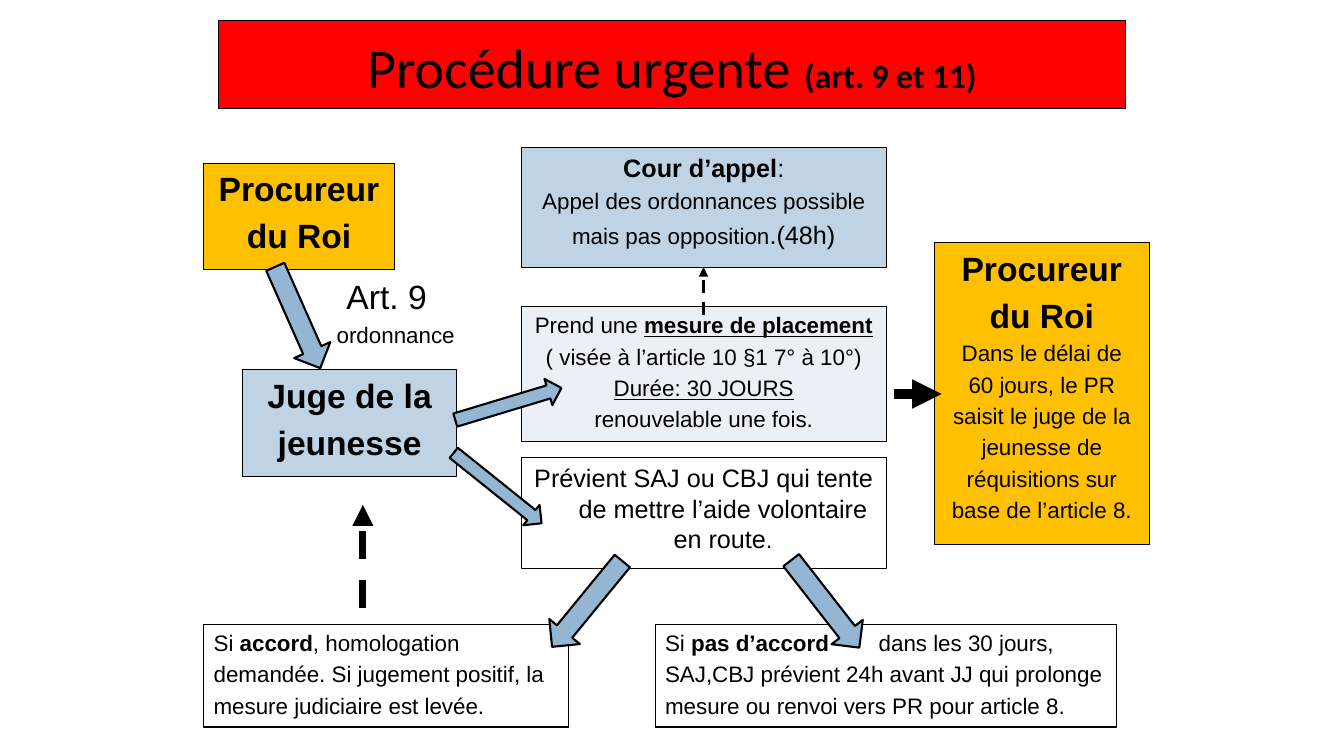
from lxml.etree import SubElement
from pptx import Presentation
from pptx.dml.color import RGBColor
from pptx.enum.dml import MSO_LINE
from pptx.enum.shapes import MSO_CONNECTOR, MSO_SHAPE
from pptx.enum.text import MSO_ANCHOR as ANCHOR, PP_ALIGN as ALIGN
from pptx.oxml.ns import qn
from pptx.util import Inches, Pt

COLS, ROWS = 160, 90
BLACK, RED, GOLD = "000000", "FF0000", "FFC000"
BLUE, PALE, STEEL = "BFD3E4", "EAF0F6", "94B6D2"


def rgb(value):
    return RGBColor.from_string(value)


class Board:
    """Draws styled elements on a slide laid out as a grid of columns and rows."""

    def __init__(self, prs):
        self.s = prs.slides.add_slide(prs.slide_layouts[6])
        self.col = prs.slide_width / COLS
        self.row = prs.slide_height / ROWS

    def place(self, x, y, w, h):
        return [int(v) for v in (x * self.col, y * self.row, w * self.col, h * self.row)]

    def shape(self, kind, at, fill, line=0.75):
        sp = self.s.shapes.add_shape(kind, *self.place(*at))
        sp.shadow.inherit = False
        if fill:
            sp.fill.solid()
            sp.fill.fore_color.rgb = rgb(fill)
        else:
            sp.fill.background()
        sp.line.color.rgb = rgb(BLACK)
        sp.line.width = Pt(line)
        return sp

    def set_text(self, tf, paras, align, font="Arial", hanging=True, shift=0):
        tf.word_wrap = True
        for i, runs in enumerate(paras):
            p = tf.paragraphs[0] if i == 0 else tf.add_paragraph()
            p.alignment = align
            if hanging:
                pPr = p._p.get_or_add_pPr()
                pPr.set("marL", str(Inches(0.38)))
                pPr.set("indent", str(Inches(-0.38 + shift * i)))
                before = SubElement(pPr, qn("a:spcBef"))
                SubElement(before, qn("a:spcPct")).set("val", "20000")
            for text, size, style in runs:
                r = p.add_run()
                r.text = text
                r.font.name = font
                r.font.size = Pt(size)
                r.font.color.rgb = rgb(BLACK)
                r.font.bold = "b" in style
                r.font.underline = "u" in style
                if "w" in style:
                    r._r.get_or_add_rPr().set("spc", "3100")

    def title(self, at, runs):
        tf = self.shape(MSO_SHAPE.RECTANGLE, at, RED).text_frame
        tf.vertical_anchor = ANCHOR.MIDDLE
        self.set_text(tf, [runs], ALIGN.CENTER, "Calibri", hanging=False)

    def box(self, at, fill, paras, align=ALIGN.CENTER):
        tf = self.shape(MSO_SHAPE.RECTANGLE, at, fill).text_frame
        tf.vertical_anchor = ANCHOR.TOP
        self.set_text(tf, paras, align)

    def label(self, at, paras, shift):
        tf = self.s.shapes.add_textbox(*self.place(*at)).text_frame
        self.set_text(tf, paras, ALIGN.CENTER, shift=shift)

    def block_arrow(self, at, angle):
        self.shape(MSO_SHAPE.DOWN_ARROW, at, STEEL, 1.5).rotation = angle

    def line_arrow(self, x1, y1, x2, y2, width, dashed):
        ends = self.place(x1, y1, x2, y2)
        c = self.s.shapes.add_connector(MSO_CONNECTOR.STRAIGHT, *ends)
        c.line.color.rgb = rgb(BLACK)
        c.line.width = Pt(width)
        if dashed:
            c.line.dash_style = MSO_LINE.DASH
        spPr = c._element.spPr
        SubElement(spPr.find(qn("a:ln")), qn("a:tailEnd")).set("type", "triangle")
        SubElement(spPr, qn("a:effectLst"))


def lines(size, style, *texts):
    return [[(text, size, style)] for text in texts]


def main():
    prs = Presentation()
    prs.slide_width, prs.slide_height = Inches(13.33), Inches(7.5)
    b = Board(prs)
    left, middle, width = 24.25, 62.05, 43.45
    bottom, bottom_h, head_h = 74.3, 12.25, 12.7
    prosecutor = lines(24, "b", "Procureur", "du Roi")

    b.title((26, 2.4, 108, 10.5), [
        ("Procédure urgente", 40, ""), (" ", 44, ""), ("(art. 9 et 11)", 24, "b")])

    b.box((left, 19.45, 22.7, head_h), GOLD, prosecutor)
    b.box((28.9, 44.05, 25.45, head_h), BLUE, lines(24, "b", "Juge de la", "jeunesse"))
    b.box((middle, 17.6, width, 14.2), BLUE, [
        [("Cour d’appel", 18, "b"), (":", 18, "")],
        [("Appel des ordonnances possible", 16, "")],
        [("mais pas opposition", 16, ""), (".(48h)", 18, "")]])
    b.box((middle, 36.5, width, 16.1), PALE, [
        [("Prend une ", 16, ""), ("mesure de placement", 16, "bu")],
        [("( visée à l’article 10 §1 7° à 10°)", 16, "")],
        [("Durée: 30 JOURS", 16, "u")],
        [("renouvelable une fois.", 16, "")]])
    b.box((111.25, 28.9, 25.55, 35.9), GOLD, prosecutor + lines(
        16, "", "Dans le délai de", "60 jours, le PR", "saisit le juge de la",
        "jeunesse de", "réquisitions sur", "base de l’article 8."))
    b.label((35.4, 32.3, 21.25, 5.65),
            [[("Art. 9", 24, "")], [("ordonnance", 16, "")]], shift=0.18)
    b.box((middle, 54.5, width, 13.2), None, [
        [("Prévient SAJ ou CBJ qui tente de mettre l’aide volontaire en route", 18, ""),
         (".", 16, "")]])
    b.box((left, bottom, width, bottom_h), None, [
        [("Si ", 16, ""), ("accord", 16, "b"), (", homologation", 16, "")],
        *lines(16, "", "demandée. Si jugement positif, la", "mesure judiciaire est levée.")],
        ALIGN.LEFT)
    b.box((78, bottom, 54.95, bottom_h), None, [
        [("Si ", 16, ""), ("pas d’accord", 16, "b"), (" ", 16, "bw"),
         ("dans les 30 jours,", 16, "")],
        *lines(16, "", "SAJ,CBJ prévient 24h avant JJ qui prolonge",
               "mesure ou renvoi vers PR pour article 8.")],
        ALIGN.LEFT)

    b.line_arrow(43.2, 72.35, 43.2, 60.1, 5, True)
    b.line_arrow(83.75, 37.45, 83.75, 31.8, 2.25, True)
    b.line_arrow(106.45, 46.9, 112.1, 46.9, 7, False)

    for at, angle in [
        ((33.1, 31.2, 4.7, 13.2), 336.1),
        ((58.9, 41.5, 3.25, 13.2), 253.2),
        ((57.7, 51.4, 3.1, 13.4), 308.7),
        ((67.55, 65.3, 4.7, 13.2), 39.3),
        ((95.9, 65.3, 4.7, 13.2), 322.1),
    ]:
        b.block_arrow(at, angle)

    prs.save("out.pptx")


if __name__ == "__main__":
    main()
